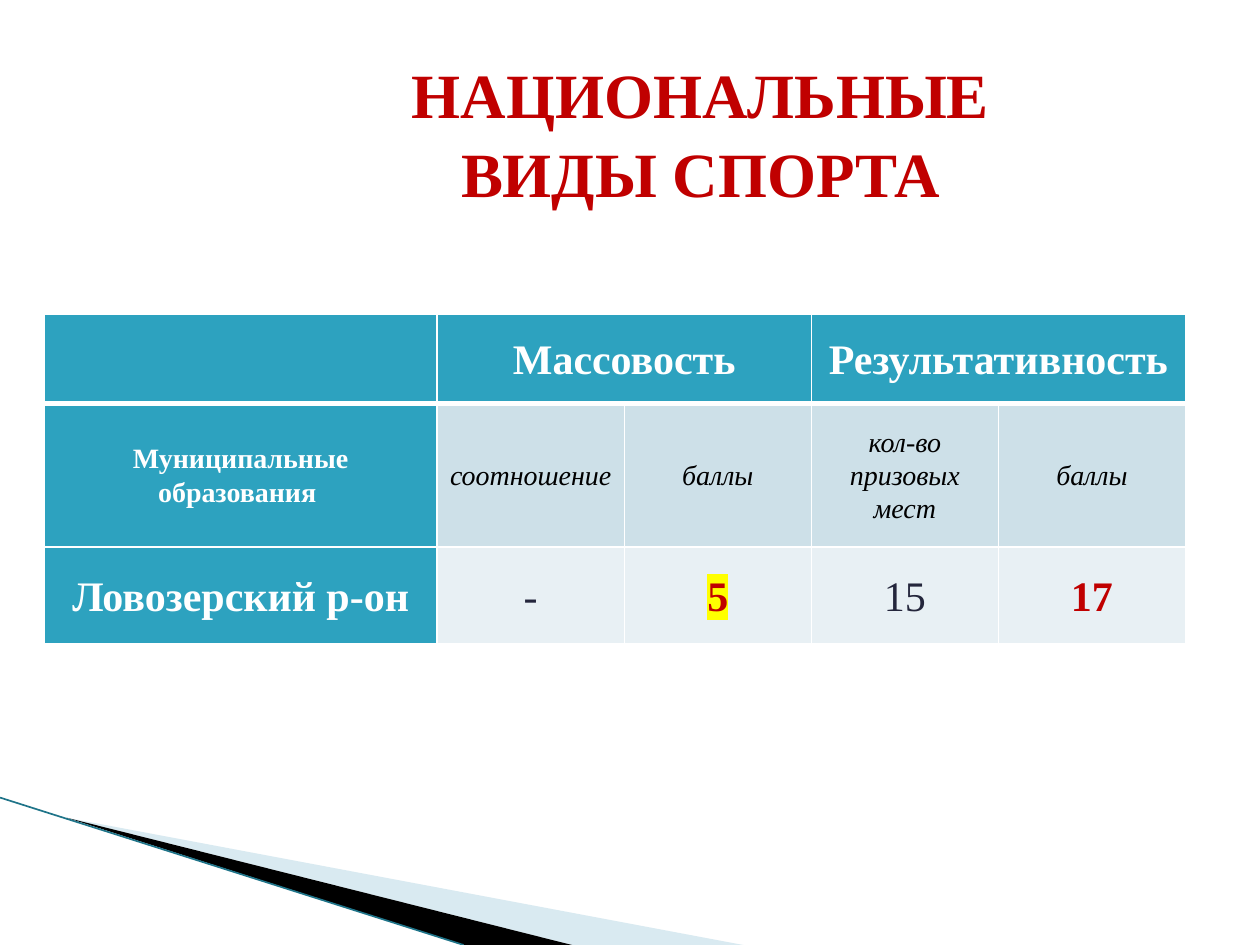
from dataclasses import dataclass

from pptx import Presentation
from pptx.dml.color import RGBColor
from pptx.enum.shapes import MSO_CONNECTOR
from pptx.enum.text import MSO_ANCHOR, PP_ALIGN
from pptx.oxml.ns import qn
from pptx.util import Inches, Pt
from lxml.etree import SubElement, Element


@dataclass(frozen=True)
class Theme:
    """Colours, font and type sizes of the slide."""
    font: str = "Times New Roman"
    title_size: int = 36
    large: int = 24
    small: int = 16
    white: str = "FFFFFF"
    black: str = "000000"
    red: str = "C00000"
    ink: str = "24263C"
    teal: str = "2DA2BF"
    band: str = "CDE0E8"
    pale_band: str = "E8F0F4"
    highlight: str = "FFFF00"
    wedge: str = "A0CBDC"
    edge: str = "1F7489"


THEME = Theme()


def rgb(value):
    """Turn a hex string into a colour."""
    return RGBColor.from_string(value)


def add_run(paragraph, text, size, color, bold=False, italic=False, highlight=None):
    """Add one formatted run to a paragraph."""
    run = paragraph.add_run()
    run.text = text
    font = run.font
    font.name, font.size = THEME.font, Pt(size)
    font.bold, font.italic = bold, italic
    font.color.rgb = rgb(color)
    if highlight:
        mark = Element(qn("a:highlight"))
        SubElement(mark, qn("a:srgbClr"), val=highlight)
        run._r.rPr.find(qn("a:solidFill")).addnext(mark)


def add_wedge(slide, points, color, opacity=None):
    """Draw a borderless polygon through points given in inches."""
    start, *rest = [(Inches(x), Inches(y)) for x, y in points]
    builder = slide.shapes.build_freeform(*start)
    builder.add_line_segments(rest, close=True)
    wedge = builder.convert_to_shape()
    wedge.shadow.inherit = False
    wedge.fill.solid()
    wedge.fill.fore_color.rgb = rgb(color)
    wedge.line.fill.background()
    if opacity:
        tint = wedge._element.spPr.find(qn("a:solidFill"))[0]
        SubElement(tint, qn("a:alpha"), val=str(opacity * 1000))


def add_corner(slide, left, top, width, height):
    """Draw the corner wedges and their edge line in the given box."""
    bottom = top + height
    tip_x, tip_y = left + 0.53, top + 0.16
    add_wedge(slide, [(tip_x, tip_y), (left + width, bottom), (left + 4.54, bottom)],
              THEME.wedge, 40)
    add_wedge(slide, [(tip_x, tip_y), (left + 4.54, bottom), (left + 3.68, bottom)],
              THEME.black)
    edge = slide.shapes.add_connector(
        MSO_CONNECTOR.STRAIGHT, Inches(left), Inches(top),
        Inches(left + 3.68), Inches(bottom))
    edge.line.color.rgb = rgb(THEME.edge)
    edge.line.width = Pt(0.95)
    SubElement(edge._element.spPr, qn("a:effectLst"))


def add_title(slide, left, top, width, height):
    """Place the two-line title in the given box."""
    frame = slide.shapes.add_textbox(
        Inches(left), Inches(top), Inches(width), Inches(height)).text_frame
    frame.word_wrap = True
    frame.vertical_anchor = MSO_ANCHOR.MIDDLE
    for index, line in enumerate(["НАЦИОНАЛЬНЫЕ", "ВИДЫ СПОРТА"]):
        paragraph = frame.add_paragraph() if index else frame.paragraphs[0]
        paragraph.alignment = PP_ALIGN.CENTER
        paragraph.line_spacing = 1.05
        add_run(paragraph, line, THEME.title_size, THEME.red, bold=True)


def style_cell(cell, fill, bottom_width):
    """Set the borders, fill, margins and anchor of a cell."""
    properties = cell._tc.get_or_add_tcPr()
    for side, width in (("L", 1), ("R", 1), ("T", 1), ("B", bottom_width)):
        border = SubElement(properties, qn(f"a:ln{side}"), w=str(Pt(width)))
        SubElement(SubElement(border, qn("a:solidFill")), qn("a:srgbClr"), val=THEME.white)
    cell.fill.solid()
    cell.fill.fore_color.rgb = rgb(fill)
    cell.margin_left = cell.margin_right = Inches(0.07)
    cell.margin_top = cell.margin_bottom = 0
    cell.vertical_anchor = MSO_ANCHOR.MIDDLE


def add_results(slide, left, top, width, row_heights):
    """Place the results table, with one wide and four equal columns."""
    header = dict(size=THEME.large, color=THEME.white, bold=True)
    label = dict(header, size=THEME.small)
    measure = dict(size=THEME.small, color=THEME.black, italic=True)
    value = dict(size=THEME.large, color=THEME.ink)
    score = dict(size=THEME.large, color=THEME.red, bold=True)
    rows = [
        [None, ("Массовость", header), None, ("Результативность", header), None],
        [("Муниципальные образования ", label), ("соотношение", measure),
         ("баллы", measure), ("кол-во призовых мест", measure), ("баллы", measure)],
        [("Ловозерский р-он", header), ("-", value),
         ("5", dict(score, highlight=THEME.highlight)), ("15", value), ("17", score)],
    ]
    fills = [THEME.teal, THEME.band, THEME.pale_band]
    name_width = 3.12
    widths = [name_width] + [(width - name_width) / 4] * 4
    table = slide.shapes.add_table(
        len(rows), len(widths), Inches(left), Inches(top),
        Inches(width), Inches(sum(row_heights))).table
    for column, column_width in zip(table.columns, widths):
        column.width = Inches(column_width)
    for row, row_height in zip(table.rows, row_heights):
        row.height = Inches(row_height)
    for first in (1, 3):
        table.cell(0, first).merge(table.cell(0, first + 1))
    for r, contents in enumerate(rows):
        for c, content in enumerate(contents):
            cell = table.cell(r, c)
            style_cell(cell, fills[r] if c else THEME.teal, 1 if r else 3)
            if content:
                text, style = content
                paragraph = cell.text_frame.paragraphs[0]
                paragraph.alignment = PP_ALIGN.CENTER
                paragraph.line_spacing = 1.07
                add_run(paragraph, text, **style)


def main():
    """Build and save the slide."""
    deck = Presentation()
    deck.slide_width, deck.slide_height = Inches(10), Inches(7.5)
    slide = deck.slides.add_slide(deck.slide_layouts[6])
    add_corner(slide, 0, 6.33, 5.9, 1.17)
    add_results(slide, 0.35, 2.49, 9.06, [0.71, 1.14, 0.77])
    add_title(slide, 1.12, 0.3, 8.88, 1.48)
    deck.save("out.pptx")


if __name__ == "__main__":
    main()
